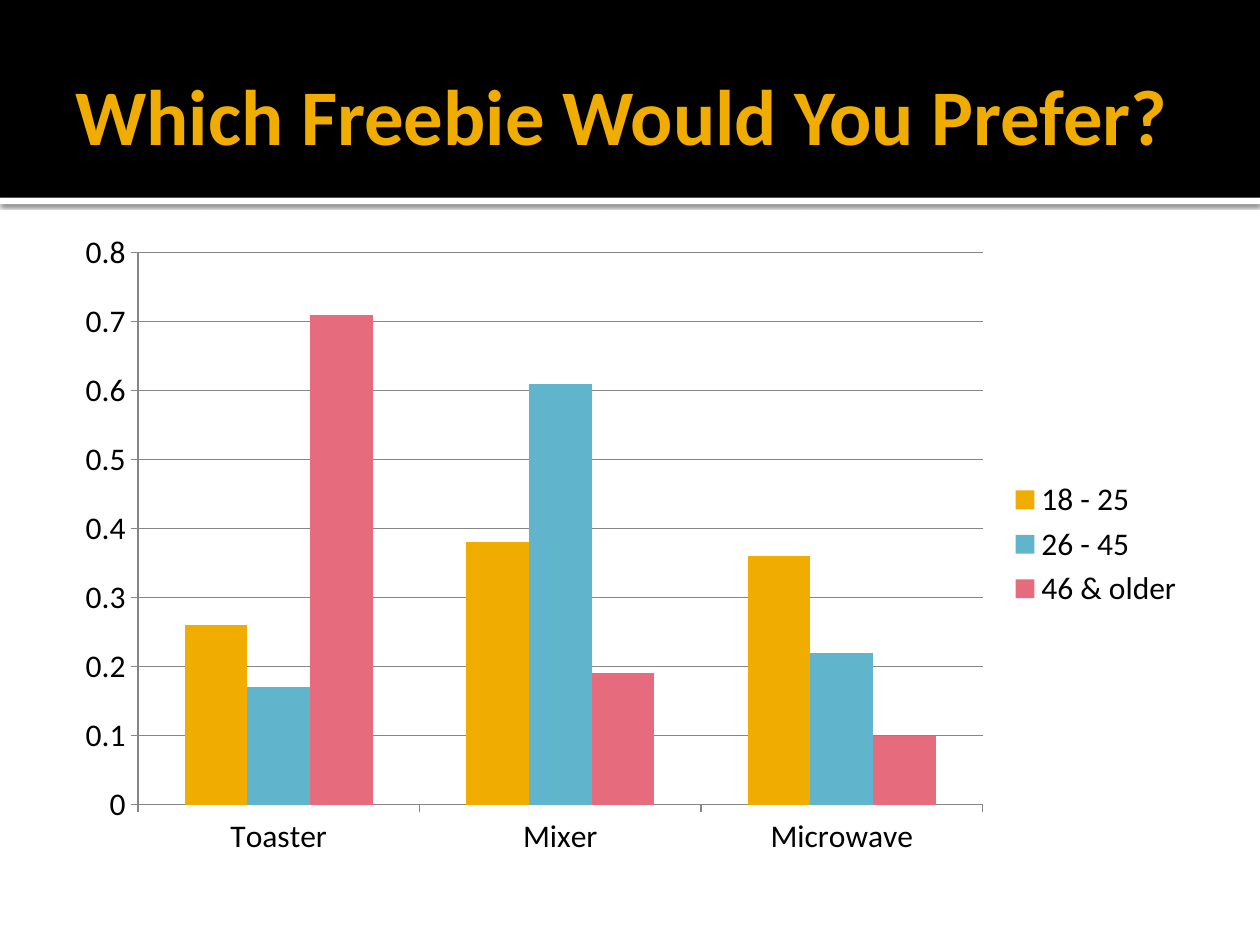
from dataclasses import dataclass

from lxml.etree import SubElement
from pptx import Presentation
from pptx.chart.data import CategoryChartData
from pptx.dml.color import RGBColor
from pptx.enum.chart import XL_CHART_TYPE as ChartType
from pptx.enum.chart import XL_LEGEND_POSITION as LegendPosition
from pptx.enum.chart import XL_TICK_MARK as TickMark
from pptx.enum.shapes import MSO_SHAPE as Shape
from pptx.enum.text import MSO_ANCHOR as Anchor
from pptx.oxml.ns import qn
from pptx.util import Inches, Pt

COLORS = {
    "black": "000000",
    "white": "FFFFFF",
    "gold": "F0AD00",
    "blue": "60B5CC",
    "rose": "E66C7D",
    "grid": "868686",
}
FONT = "Calibri"
HEADER_HEIGHT = 1.57


@dataclass
class Band:
    top: float
    height: float
    color: str
    shadow: bool = False


@dataclass
class AgeGroup:
    name: str
    shares: tuple[float, ...]
    color: str


BANDS = [
    Band(HEADER_HEIGHT, 0.05, "white", shadow=True),
    Band(0, HEADER_HEIGHT, "black"),
]
FREEBIES = ["Toaster", "Mixer", "Microwave"]
AGE_GROUPS = [
    AgeGroup("18 - 25", (0.26, 0.38, 0.36), "gold"),
    AgeGroup("26 - 45", (0.17, 0.61, 0.22), "blue"),
    AgeGroup("46 & older", (0.71, 0.19, 0.1), "rose"),
]


def rgb(name: str) -> RGBColor:
    return RGBColor.from_string(COLORS[name])


def set_font(font, size: float, color: str, bold: bool = False) -> None:
    for key, value in {"name": FONT, "size": Pt(size), "bold": bold}.items():
        setattr(font, key, value)
    font.color.rgb = rgb(color)


def add_drop_shadow(shape) -> None:
    effects = shape._element.spPr.find(qn("a:effectLst"))
    shadow = SubElement(effects, qn("a:outerShdw"), blurRad=str(Pt(2.5)),
                        dist=str(Pt(0.8)), dir="5400000", rotWithShape="0")
    tint = SubElement(shadow, qn("a:srgbClr"), val=COLORS["black"])
    SubElement(tint, qn("a:alpha"), val="60000")


def draw_band(page, band: Band, width: int) -> None:
    box = page.shapes.add_shape(Shape.RECTANGLE, 0, Inches(band.top),
                                width, Inches(band.height))
    box.shadow.inherit = False
    box.fill.solid()
    box.fill.fore_color.rgb = rgb(band.color)
    box.line.fill.background()
    if band.shadow:
        add_drop_shadow(box)


def draw_title(page, text: str) -> None:
    box = page.shapes.add_textbox(Inches(0.5), Inches(0.28), Inches(9), Inches(1.25))
    frame = box.text_frame
    settings = {
        "word_wrap": True,
        "vertical_anchor": Anchor.MIDDLE,
        "margin_left": Inches(0.1),
        "margin_right": Inches(0.05),
        "margin_top": Inches(0.05),
        "margin_bottom": Inches(0.05),
    }
    for key, value in settings.items():
        setattr(frame, key, value)
    span = frame.paragraphs[0].add_run()
    span.text = text
    set_font(span.font, 45, "gold", bold=True)


def style_line(line) -> None:
    line.color.rgb = rgb("grid")
    line.width = Pt(0.75)


def draw_chart(page, groups: list[AgeGroup]) -> None:
    data = CategoryChartData()
    data.categories = FREEBIES
    for group in groups:
        data.add_series(group.name, group.shares)
    chart = page.shapes.add_chart(ChartType.COLUMN_CLUSTERED, Inches(0.5), Inches(1.75),
                                  Inches(9), Inches(5.14), data).chart
    set_font(chart.font, 18, "black")
    chart.has_title = False
    chart.has_legend = True
    chart.legend.position = LegendPosition.RIGHT
    chart.legend.include_in_layout = False

    plot = chart.plots[0]
    plot.gap_width = 150
    plot.overlap = 0
    plot.vary_by_categories = False
    for series, group in zip(plot.series, groups):
        series.format.fill.solid()
        series.format.fill.fore_color.rgb = rgb(group.color)

    for axis in (chart.category_axis, chart.value_axis):
        axis.major_tick_mark = TickMark.OUTSIDE
        axis.minor_tick_mark = TickMark.NONE
        style_line(axis.format.line)
    scale = {"minimum_scale": 0, "maximum_scale": 0.8, "major_unit": 0.1,
             "has_major_gridlines": True}
    for key, value in scale.items():
        setattr(chart.value_axis, key, value)
    style_line(chart.value_axis.major_gridlines.format.line)


def main() -> None:
    deck = Presentation()
    deck.slide_width, deck.slide_height = Inches(10), Inches(7.5)
    page = deck.slides.add_slide(deck.slide_layouts[6])
    page.background.fill.solid()
    page.background.fill.fore_color.rgb = rgb("white")
    for band in BANDS:
        draw_band(page, band, deck.slide_width)
    draw_title(page, "Which Freebie Would You Prefer?")
    draw_chart(page, AGE_GROUPS)
    deck.save("out.pptx")


if __name__ == "__main__":
    main()
